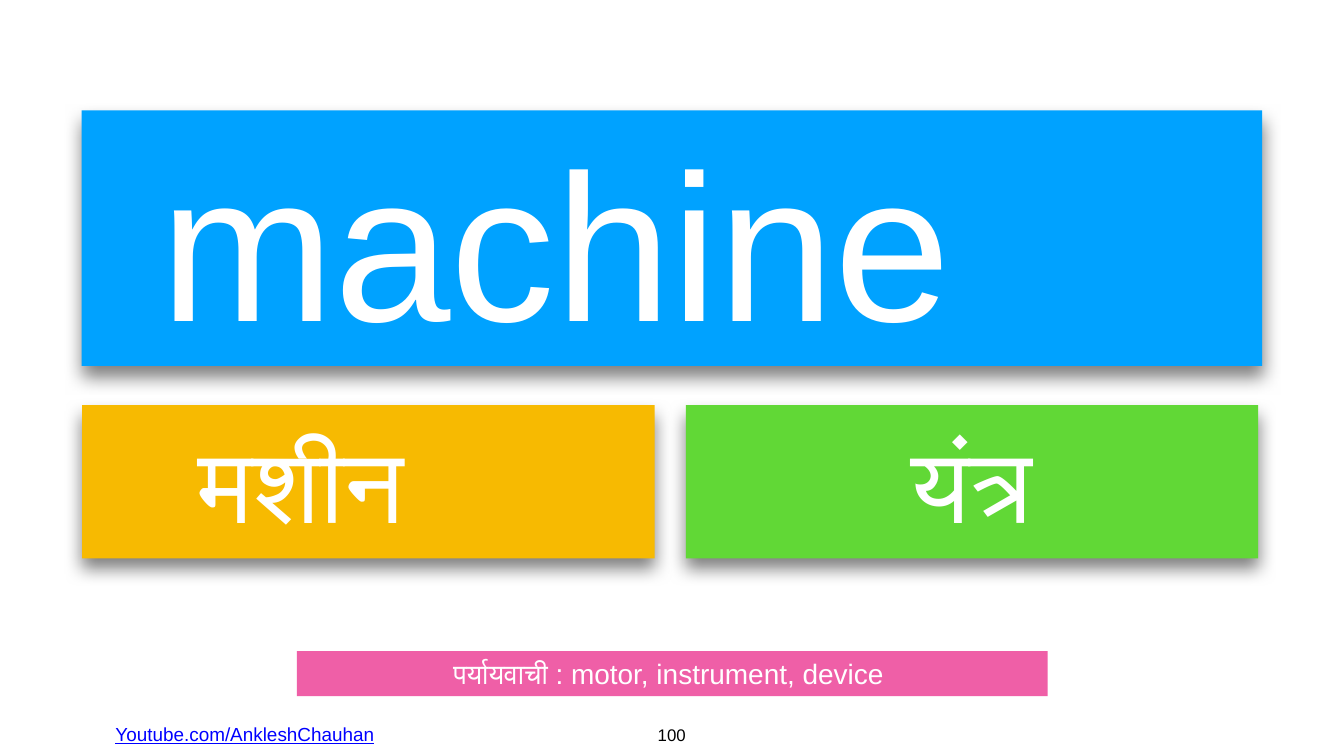
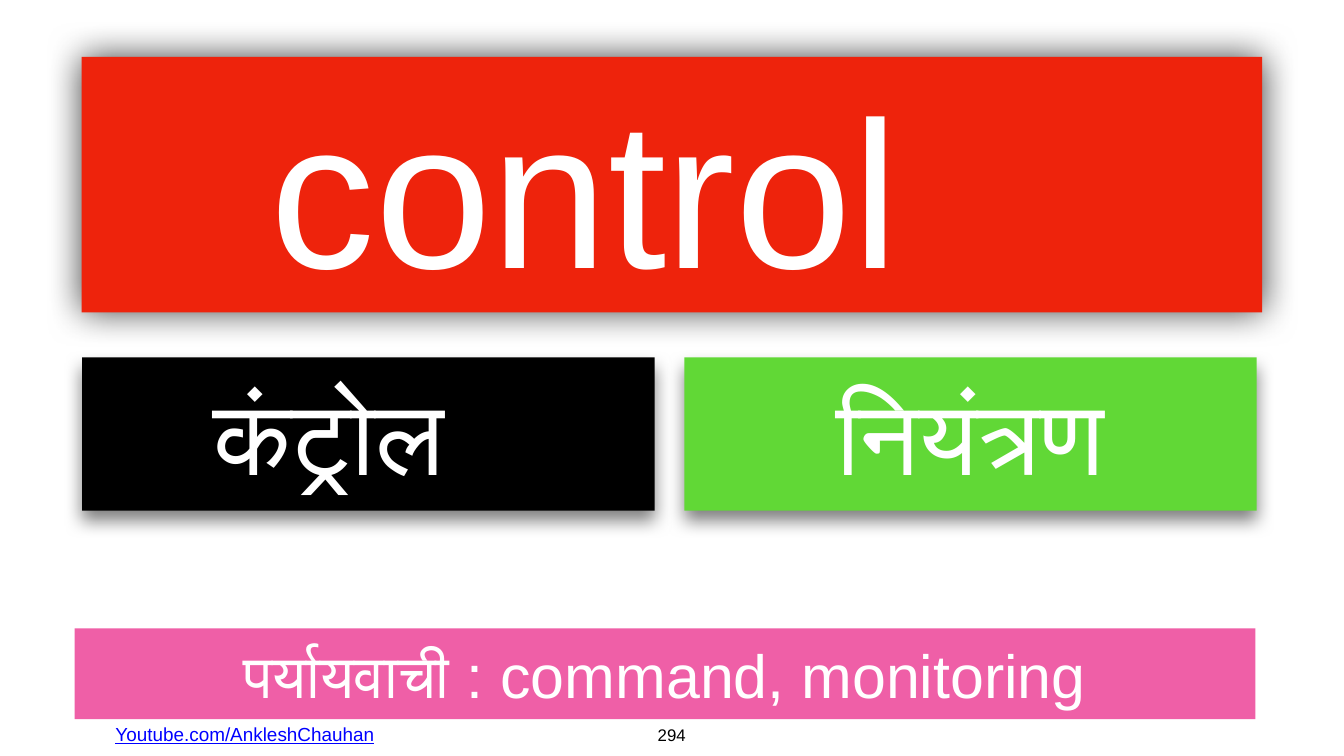
from dataclasses import dataclass

from lxml.etree import SubElement
from pptx import Presentation
from pptx.dml.color import RGBColor
from pptx.enum.shapes import MSO_SHAPE as Preset
from pptx.enum.text import MSO_ANCHOR as Anchor, PP_ALIGN as Align
from pptx.oxml.ns import qn
from pptx.util import Cm, Pt

# Boxes are (left, top, width, height) in cm; "shift" is the extra right
# margin in cm that moves a centred word to the left.
CARDS = [
    {
        "number": "100",
        "word": {"text": "machine", "top": 5.56, "fill": "00A2FF", "shift": 11.7, "shadow": "drop"},
        "meanings_top": 20.42,
        "loanword": {"text": "मशीन", "fill": "F7BA01", "shift": 6.76},
        "hindi": {"text": "यंत्र", "left": 34.57},
        "synonyms": {"text": "पर्यायवाची : motor, instrument, device", "size": 40,
                     "at": (14.96, 32.82, 37.85, 2.26), "shift": 0.39},
    },
    {
        "number": "294",
        "word": {"text": "control", "top": 2.87, "fill": "EE230C", "shift": 8.78, "shadow": "glow"},
        "meanings_top": 18.01,
        "loanword": {"text": "कंट्रोल", "fill": "000000", "shift": 4},
        "hindi": {"text": "नियंत्रण", "left": 34.49},
        "synonyms": {"text": "पर्यायवाची : command, monitoring", "size": 87,
                     "at": (3.76, 31.67, 59.51, 4.57), "shift": 0},
    },
]
CHANNEL = "Youtube.com/AnkleshChauhan"
CHANNEL_AT = (5.61, 36.27, 13.46, 1.42)
NUMBER_AT = (32.99, 36.35, 1.73, 1.27)
SLIDE_SIZE = (67.74, 38.1)
WORD_LEFT, WORD_SIZE = 4.11, (59.51, 12.88)
LOANWORD_LEFT, MEANING_SIZE = 4.14, (28.85, 7.72)
INSET = 0.15

# Opacity in percent, blur and distance in points, direction in degrees
SHADOWS = {"drop": (50, 26, 14.5, 90), "glow": (75, 52, 1, 0)}


@dataclass(frozen=True)
class Theme:
    light: str = "FFFFFF"
    dark: str = "000000"
    link: str = "0000FF"
    hindi: str = "61D836"
    synonyms: str = "EF5FA7"
    font: str = "Arial"
    loanword_font: str = "Arial Narrow"
    hindi_font: str = "Noto Sans CJK SC"
    word_size: int = 299
    meaning_size: int = 150
    channel_size: int = 27
    number_size: int = 24


THEME = Theme()


def write(shape, text, size, font=THEME.font, color=THEME.light, shift=0,
          anchor=Anchor.MIDDLE, wrap=True, underline=None):
    frame = shape.text_frame
    frame.word_wrap = wrap
    frame.vertical_anchor = anchor
    frame.margin_left = frame.margin_top = frame.margin_bottom = Cm(INSET)
    frame.margin_right = Cm(INSET + shift)
    para = frame.paragraphs[0]
    para.alignment = Align.CENTER
    span = para.add_run()
    span.text = text
    span.font.size = Pt(size)
    span.font.name = font
    span.font.underline = underline
    span.font.color.rgb = RGBColor.from_string(color)
    for script in ("a:ea", "a:cs"):
        SubElement(span.font._element, qn(script), typeface=font)


def add_shadow(shape, opacity, blur, distance, direction):
    effects = shape._element.spPr.find(qn("a:effectLst"))
    shadow = SubElement(effects, qn("a:outerShdw"), blurRad=str(Pt(blur)), dist=str(Pt(distance)),
                        dir=str(direction * 60000), algn="ctr", rotWithShape="0")
    color = SubElement(shadow, qn("a:srgbClr"), val=THEME.dark)
    SubElement(color, qn("a:alpha"), val=str(opacity * 1000))


def add_band(page, at, fill, text, size, shadow=None, **style):
    band = page.shapes.add_shape(Preset.RECTANGLE, *map(Cm, at))
    band.fill.solid()
    band.fill.fore_color.rgb = RGBColor.from_string(fill)
    band.line.fill.background()
    band.shadow.inherit = False
    if shadow:
        add_shadow(band, *SHADOWS[shadow])
    write(band, text, size, **style)


def add_label(page, at, text, size, **style):
    box = page.shapes.add_textbox(*map(Cm, at))
    write(box, text, size, wrap=False, **style)


def add_card(deck, card):
    page = deck.slides.add_slide(deck.slide_layouts[6])
    word, loanword, hindi, synonyms = (card[key] for key in ("word", "loanword", "hindi", "synonyms"))
    top = card["meanings_top"]
    add_label(page, CHANNEL_AT, CHANNEL, THEME.channel_size, color=THEME.link, underline=True)
    add_band(page, (WORD_LEFT, word["top"], *WORD_SIZE), word["fill"], word["text"],
             THEME.word_size, word["shadow"], shift=word["shift"])
    add_band(page, (LOANWORD_LEFT, top, *MEANING_SIZE), loanword["fill"], loanword["text"],
             THEME.meaning_size, "drop", font=THEME.loanword_font, shift=loanword["shift"])
    add_band(page, (hindi["left"], top, *MEANING_SIZE), THEME.hindi, hindi["text"],
             THEME.meaning_size, "drop", font=THEME.hindi_font)
    add_band(page, synonyms["at"], THEME.synonyms, synonyms["text"], synonyms["size"],
             shift=synonyms["shift"])
    add_label(page, NUMBER_AT, card["number"], THEME.number_size, color=THEME.dark, anchor=Anchor.TOP)


def main():
    deck = Presentation()
    deck.slide_width, deck.slide_height = map(Cm, SLIDE_SIZE)
    for card in CARDS:
        add_card(deck, card)
    deck.save("out.pptx")


if __name__ == "__main__":
    main()
